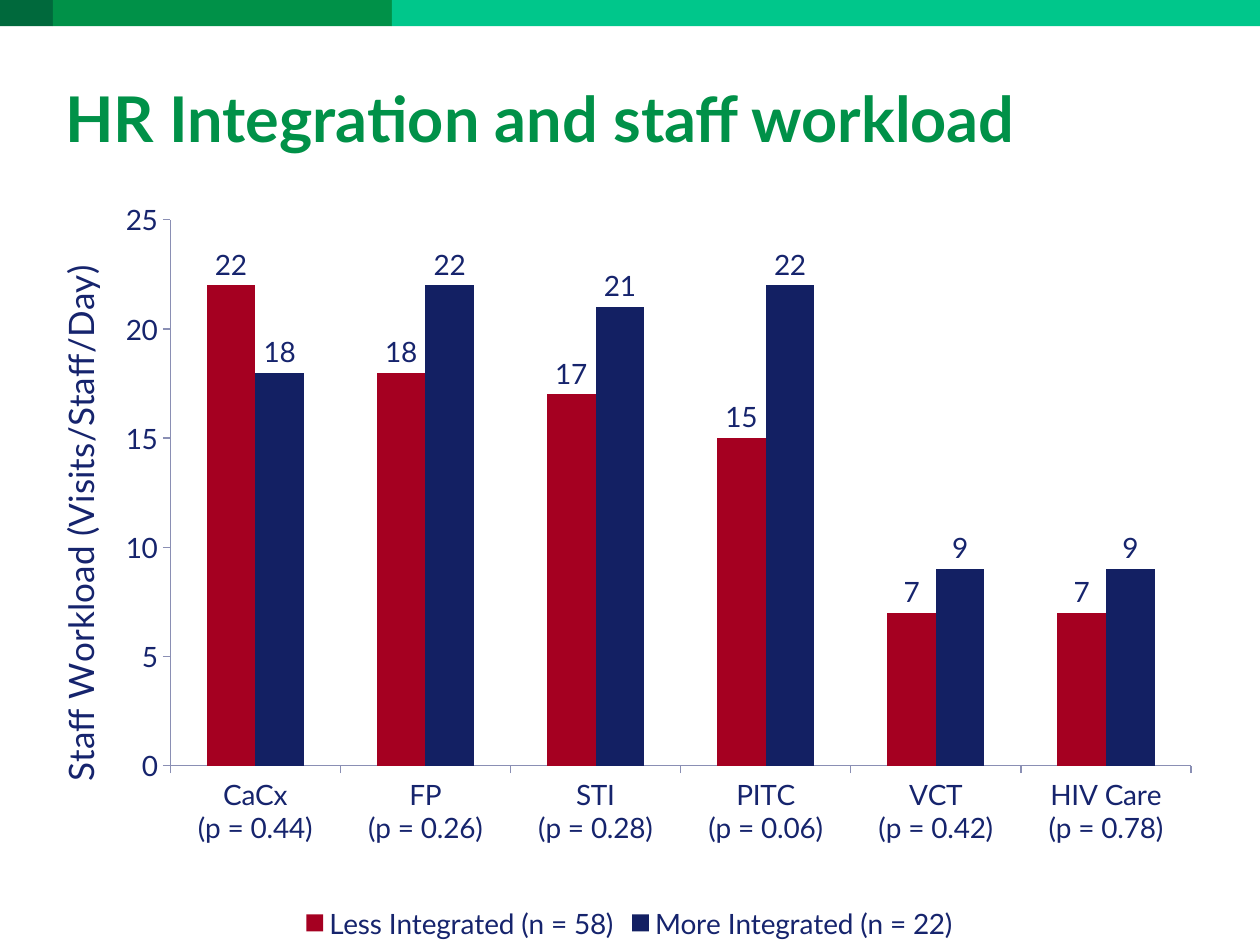
from dataclasses import dataclass

from lxml import etree
from pptx import Presentation
from pptx.chart.data import CategoryChartData
from pptx.dml.color import RGBColor
from pptx.enum.chart import XL_CHART_TYPE, XL_LABEL_POSITION, XL_LEGEND_POSITION, XL_TICK_MARK
from pptx.enum.shapes import MSO_SHAPE
from pptx.enum.text import MSO_ANCHOR, PP_ALIGN
from pptx.oxml.ns import qn
from pptx.util import Pt

COLUMNS = XL_CHART_TYPE.COLUMN_CLUSTERED
OUTSIDE_END = XL_LABEL_POSITION.OUTSIDE_END
BOTTOM = XL_LEGEND_POSITION.BOTTOM
TICK_OUT = XL_TICK_MARK.OUTSIDE
RECT = MSO_SHAPE.RECTANGLE
MIDDLE = MSO_ANCHOR.MIDDLE
LEFT = PP_ALIGN.LEFT
TITLE_ONLY = 5


@dataclass(frozen=True)
class Theme:
    font: str = "Lato"
    title: RGBColor = RGBColor.from_string("009148")
    text: RGBColor = RGBColor.from_string("16246D")
    axis: RGBColor = RGBColor.from_string("8A8FB4")
    paper: RGBColor = RGBColor.from_string("FFFFFF")
    bands: tuple = tuple(map(RGBColor.from_string, ("00693C", "009148", "00C78B")))
    series: tuple = tuple(map(RGBColor.from_string, ("A50021", "132063")))
    title_size: int = 36
    axis_title_size: int = 20
    chart_size: int = 16


THEME = Theme()
WIDTH, HEIGHT = 720, 540
BAND_SHARES = (0.042, 0.269, 0.689)
PLOT = {"x": 0.105, "y": 0.033, "w": 0.878, "h": 0.728}
WORKLOAD = {
    "Less Integrated (n = 58)": (22, 18, 17, 15, 7, 7),
    "More Integrated (n = 22)": (18, 22, 21, 22, 9, 9),
}
P_VALUES = {"CaCx": "0.44", "FP": "0.26", "STI": "0.28",
            "PITC": "0.06", "VCT": "0.42", "HIV Care": "0.78"}


def style_font(font, size, color, bold=False):
    font.name = THEME.font
    font.size = Pt(size)
    font.bold = bold
    font.color.rgb = color


def add_bands(slide, x, y, w, h):
    for share, color in zip(BAND_SHARES, THEME.bands):
        sp = slide.shapes.add_shape(RECT, Pt(x), Pt(y), Pt(w * share), Pt(h))
        sp.shadow.inherit = False
        sp.fill.solid()
        sp.fill.fore_color.rgb = color
        sp.line.fill.background()
        x += w * share


def set_title(slide, text, x, y, w, h):
    sp = slide.shapes.title
    sp.left, sp.top, sp.width, sp.height = Pt(x), Pt(y), Pt(w), Pt(h)
    tf = sp.text_frame
    tf.word_wrap = True
    tf.vertical_anchor = MIDDLE
    p = tf.paragraphs[0]
    p.alignment = LEFT
    r = p.add_run()
    r.text = text
    style_font(r.font, THEME.title_size, THEME.title, bold=True)


def set_plot_layout(chart):
    plot_area = chart.plots[0]._element.getparent()
    for old in plot_area.findall(qn("c:layout")):
        plot_area.remove(old)
    layout = etree.Element(qn("c:layout"))
    manual = etree.SubElement(layout, qn("c:manualLayout"))
    settings = {"layoutTarget": "inner", "xMode": "edge", "yMode": "edge", **PLOT}
    for name, value in settings.items():
        etree.SubElement(manual, qn(f"c:{name}")).set("val", str(value))
    plot_area.insert(0, layout)


def format_axes(chart, title):
    for axis in (chart.category_axis, chart.value_axis):
        axis.has_major_gridlines = False
        axis.major_tick_mark = TICK_OUT
        axis.format.line.color.rgb = THEME.axis
        axis.format.line.width = Pt(0.75)
    value_axis = chart.value_axis
    value_axis.minimum_scale, value_axis.maximum_scale = 0, 25
    value_axis.major_unit = 5
    r = value_axis.axis_title.text_frame.paragraphs[0].add_run()
    r.text = title
    style_font(r.font, THEME.axis_title_size, THEME.text)


def format_series(chart):
    plot = chart.plots[0]
    plot.vary_by_categories = False
    plot.gap_width, plot.overlap = 150, 0
    for series, color in zip(plot.series, THEME.series):
        series.format.fill.solid()
        series.format.fill.fore_color.rgb = color
        labels = series.data_labels
        labels.show_value = True
        labels.position = OUTSIDE_END
        labels.number_format = "#,##0"
        labels.number_format_is_linked = False


def add_workload_chart(slide, x, y, w, h):
    data = CategoryChartData()
    data.categories = [f"{name}\n(p = {p})" for name, p in P_VALUES.items()]
    for name, values in WORKLOAD.items():
        data.add_series(name, values)
    chart = slide.shapes.add_chart(COLUMNS, Pt(x), Pt(y), Pt(w), Pt(h), data).chart
    chart.has_title = False
    style_font(chart.font, THEME.chart_size, THEME.text)
    chart.has_legend = True
    chart.legend.position = BOTTOM
    chart.legend.include_in_layout = False
    format_axes(chart, "Staff Workload (Visits/Staff/Day)")
    format_series(chart)
    set_plot_layout(chart)


def build_slide(prs):
    slide = prs.slides.add_slide(prs.slide_layouts[TITLE_ONLY])
    slide.background.fill.solid()
    slide.background.fill.fore_color.rgb = THEME.paper
    add_bands(slide, 0, 0, WIDTH, 15)
    set_title(slide, "HR Integration and staff workload", 30, 26, 659, 82)
    add_workload_chart(slide, 27.5, 111.5, 664.5, 428.5)


def main():
    prs = Presentation()
    prs.slide_width, prs.slide_height = Pt(WIDTH), Pt(HEIGHT)
    build_slide(prs)
    prs.save("out.pptx")


if __name__ == "__main__":
    main()
